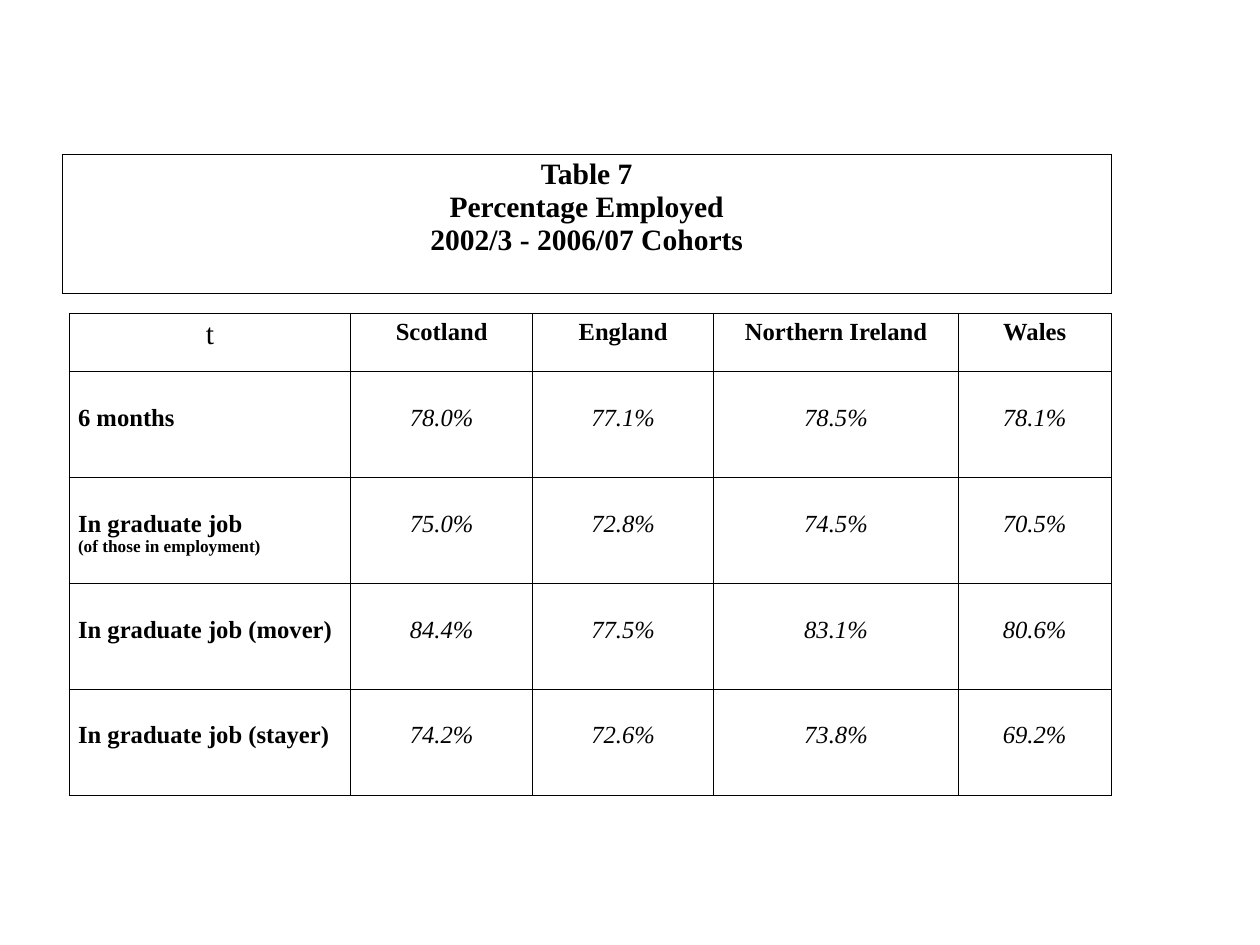
from lxml import etree
from pptx import Presentation
from pptx.dml.color import RGBColor
from pptx.enum.text import PP_ALIGN
from pptx.oxml.ns import qn
from pptx.util import Pt

LEFT, MID = PP_ALIGN.LEFT, PP_ALIGN.CENTER
BLACK = RGBColor(0x00, 0x00, 0x00)
FONT = "Times New Roman"
SIDES = ("a:lnL", "a:lnR", "a:lnT", "a:lnB")


class Sheet:
    """Holds the style and the current slide."""

    def __init__(self, slide, font, ink, rule):
        self.slide, self.font, self.ink, self.rule = slide, font, ink, rule

    def table(self, left, top, cols, rows):
        frame = self.slide.shapes.add_table(
            len(rows), len(cols), Pt(left), Pt(top), Pt(sum(cols)), Pt(sum(rows)))
        grid = frame.table
        grid.first_row = grid.horz_banding = False
        for col, width in zip(grid.columns, cols):
            col.width = Pt(width)
        for row, height in zip(grid.rows, rows):
            row.height = Pt(height)
        for cell in grid.iter_cells():
            cell.fill.background()
            self.border(cell)
        return grid

    def border(self, cell):
        props = cell._tc.get_or_add_tcPr()
        for spot, side in enumerate(SIDES):
            line = etree.Element(qn(side), w=str(Pt(self.rule)))
            fill = etree.SubElement(line, qn("a:solidFill"))
            etree.SubElement(fill, qn("a:srgbClr"), val=str(self.ink))
            props.insert(spot, line)

    def text(self, cell, lines, align=MID, bold=False, italic=False, top=3.6):
        """Write (text, size) lines, one paragraph each."""
        cell.margin_top = Pt(top)
        frame = cell.text_frame
        for spot, (words, size) in enumerate(lines):
            para = frame.add_paragraph() if spot else frame.paragraphs[0]
            para.alignment = align
            run = para.add_run()
            run.text = words
            font = run.font
            font.name, font.size = self.font, Pt(size)
            font.bold, font.italic = bold, italic
            font.color.rgb = self.ink


HEADS = ["Scotland", "England", "Northern Ireland", "Wales"]
DATA = [
    ([("6 months", 20)], ["78.0%", "77.1%", "78.5%", "78.1%"]),
    ([("In graduate job", 20), ("(of those in employment)", 14)],
     ["75.0%", "72.8%", "74.5%", "70.5%"]),
    ([("In graduate job (mover)", 20)], ["84.4%", "77.5%", "83.1%", "80.6%"]),
    ([("In graduate job (stayer)", 20)], ["74.2%", "72.6%", "73.8%", "69.2%"]),
]
DROP = 26.6  # top margin of the body cells


def main():
    deck = Presentation()
    deck.slide_width, deck.slide_height = Pt(1024), Pt(768)
    sheet = Sheet(deck.slides.add_slide(deck.slide_layouts[6]), FONT, BLACK, 1)

    # Title box
    title = sheet.table(50.5, 125.3, [852.5], [113])
    sheet.text(title.cell(0, 0), [("Table 7", 24), ("Percentage Employed", 24),
                                  ("2002/3 - 2006/07 Cohorts", 24)], bold=True)

    # Header row
    grid = sheet.table(56.2, 254.9, [229, 147.5, 147.5, 198.5, 124.5],
                       [47] + [86.1] * len(DATA))
    sheet.text(grid.cell(0, 0), [("t", 24)])
    for col, head in enumerate(HEADS, 1):
        sheet.text(grid.cell(0, col), [(head, 20)], bold=True)

    # Body rows
    for row, (label, rates) in enumerate(DATA, 1):
        sheet.text(grid.cell(row, 0), label, LEFT, bold=True, top=DROP)
        for col, rate in enumerate(rates, 1):
            sheet.text(grid.cell(row, col), [(rate, 20)], italic=True, top=DROP)

    deck.save("out.pptx")


if __name__ == "__main__":
    main()
